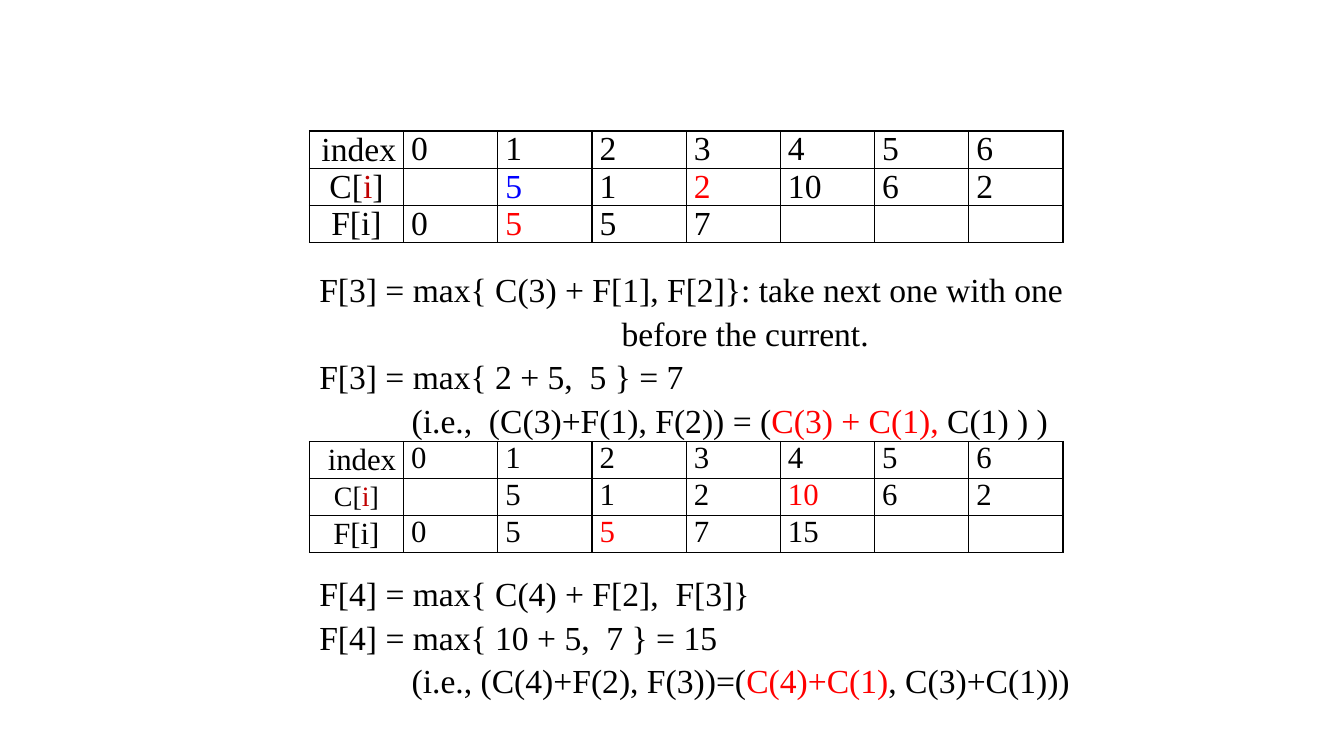
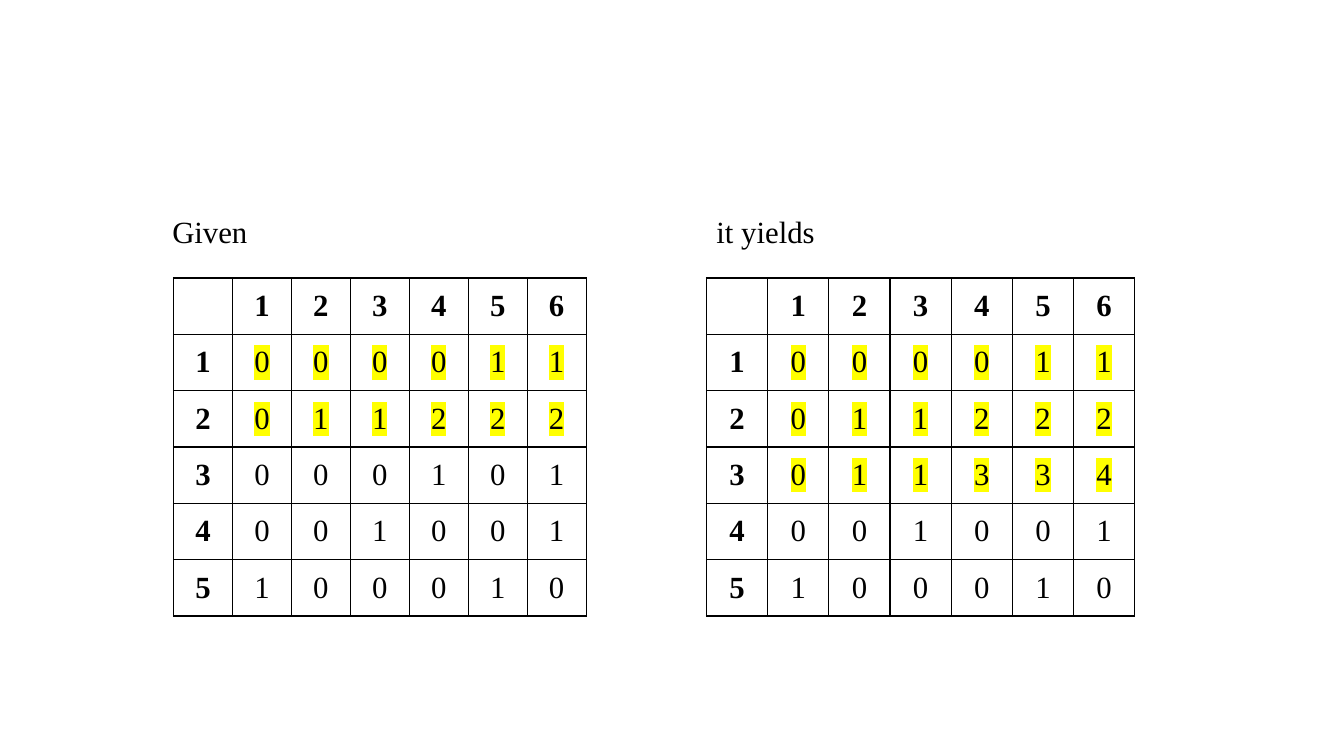
"""Build two slides that step through dynamic-programming tables."""
from lxml import etree
from pptx import Presentation
from pptx import util as u
from pptx.dml.color import RGBColor
from pptx.enum import text
from pptx.oxml.ns import qn

COLORS = {"ink": "000000", "paper": "FFFFFF", "red": "FF0000",
          "dark red": "C00000", "blue": "0000FF", "marker": "FFFF00"}
LEFT, CENTER, RIGHT = text.PP_ALIGN.LEFT, text.PP_ALIGN.CENTER, text.PP_ALIGN.RIGHT
TOP, MIDDLE = text.MSO_ANCHOR.TOP, text.MSO_ANCHOR.MIDDLE


class Board:
    font = "Times New Roman"
    line_spacing = 1.08
    cell_margin = 5.4

    def __init__(self):
        self.deck = Presentation()
        self.deck.slide_width, self.deck.slide_height = u.Pt(960), u.Pt(540)
        self.page = None

    def new_page(self):
        self.page = self.deck.slides.add_slide(self.deck.slide_layouts[6])

    def fill_para(self, para, spans, size, align=LEFT, bold=False, marked=False):
        para.alignment = align
        para.font.name, para.font.size, para.font.bold = self.font, u.Pt(size), bold
        para.font.color.rgb = RGBColor.from_string(COLORS["ink"])
        for span in [spans] if isinstance(spans, str) else spans:
            words, color = (span, None) if isinstance(span, str) else span
            run = para.add_run()
            run.text = words
            if color:
                run.font.color.rgb = RGBColor.from_string(COLORS[color])
            if marked:
                highlight = etree.SubElement(run._r.get_or_add_rPr(), qn("a:highlight"))
                etree.SubElement(highlight, qn("a:srgbClr"), val=COLORS["marker"])

    def text_box(self, left, top, width, height, lines, size, wrap=True):
        box = self.page.shapes.add_textbox(*map(u.Pt, (left, top, width, height)))
        frame = box.text_frame
        frame.word_wrap = wrap
        for number, (indent, spans) in enumerate(lines):
            para = frame.add_paragraph() if number else frame.paragraphs[0]
            para.line_spacing = self.line_spacing
            self.fill_para(para, spans, size)
            if indent:
                para._p.get_or_add_pPr().set("marL", str(u.Pt(indent)))

    def border(self, cell):
        props = cell._tc.get_or_add_tcPr()
        for side in ("lnL", "lnR", "lnT", "lnB"):
            line = etree.SubElement(props, qn(f"a:{side}"), w=str(u.Pt(1)))
            fill = etree.SubElement(line, qn("a:solidFill"))
            etree.SubElement(fill, qn("a:srgbClr"), val=COLORS["ink"])

    def table(self, left, top, column_width, row_height, rows, look):
        count, columns = len(rows), len(rows[0])
        grid = self.page.shapes.add_table(
            count, columns, u.Pt(left), u.Pt(top),
            u.Pt(column_width * columns), u.Pt(row_height * count)).table
        grid.first_row = grid.horz_banding = False
        for column in grid.columns:
            column.width = u.Pt(column_width)
        for row in grid.rows:
            row.height = u.Pt(row_height)
        for r, values in enumerate(rows):
            for c, value in enumerate(values):
                cell = grid.cell(r, c)
                self.border(cell)
                cell.fill.solid()
                cell.fill.fore_color.rgb = RGBColor.from_string(COLORS["paper"])
                cell.margin_left = cell.margin_right = u.Pt(self.cell_margin)
                cell.margin_top = cell.margin_bottom = 0
                anchor, style = look(r, c)
                cell.vertical_anchor = anchor
                if value:
                    self.fill_para(cell.text_frame.paragraphs[0], value, **style)

    def step_table(self, top, row_height, costs, sums, size, cost_label_size):
        def look(r, c):
            if c:
                return TOP, {"size": size}
            return MIDDLE, {"size": cost_label_size if r == 1 else size,
                            "align": CENTER if r else RIGHT}

        rows = [["index", *map(str, range(7))],
                [["C[", ("i", "dark red"), "]"], "", *costs],
                ["F[i]", *sums]]
        self.table(221, top, 67.3, row_height, rows, look)

    def matrix(self, left, column_width, digits, marked_rows):
        def look(r, c):
            return MIDDLE, {"size": 22, "align": CENTER, "bold": r == 0 or c == 0,
                            "marked": c > 0 and 0 < r <= marked_rows}

        rows = [["", *"123456"]]
        rows += [[str(number), *line] for number, line in enumerate(digits, 1)]
        self.table(left, 198.6, column_width, 40.25, rows, look)


def main():
    board = Board()

    board.new_page()
    board.step_table(93.6, 26.6,
                     [[("5", "blue")], "1", [("2", "red")], "10", "6", "2"],
                     ["0", [("5", "red")], "5", "7", "", "", ""], 24, 24)
    board.text_box(221, 186.5, 587, 124, [
        (0, "F[3] = max{ C(3) + F[1], F[2]}: take next one with one"),
        (216, "before the current."),
        (0, "F[3] = max{ 2 + 5,  5 } = 7"),
        (66, ["(i.e.,  (C(3)+F(1), F(2)) = (", ("C(3) + C(1),", "red"), " C(1) ) )"]),
    ], 24)
    board.step_table(315.4, 26.4,
                     ["5", "1", "2", [("10", "red")], "6", "2"],
                     ["0", "5", [("5", "red")], "7", "15", "", ""], 22, 20)
    board.text_box(221, 403.5, 580, 94, [
        (0, "F[4] = max{ C(4) + F[2],  F[3]}"),
        (0, "F[4] = max{ 10 + 5,  7 } = 15"),
        (66, ["(i.e., (C(4)+F(2), F(3))=(", ("C(4)+C(1)", "red"), ", C(3)+C(1)))"]),
    ], 24)

    board.new_page()
    board.matrix(124, 42.1, ["000011", "011222", "000101", "001001", "100010"], 2)
    board.matrix(504.7, 43.7, ["000011", "011222", "011334", "001001", "100010"], 3)
    board.text_box(116, 146, 69, 34, [(0, "Given")], 22, wrap=False)
    board.text_box(504.7, 146, 89, 34, [(0, "it yields")], 22)

    board.deck.save("out.pptx")


if __name__ == "__main__":
    main()
